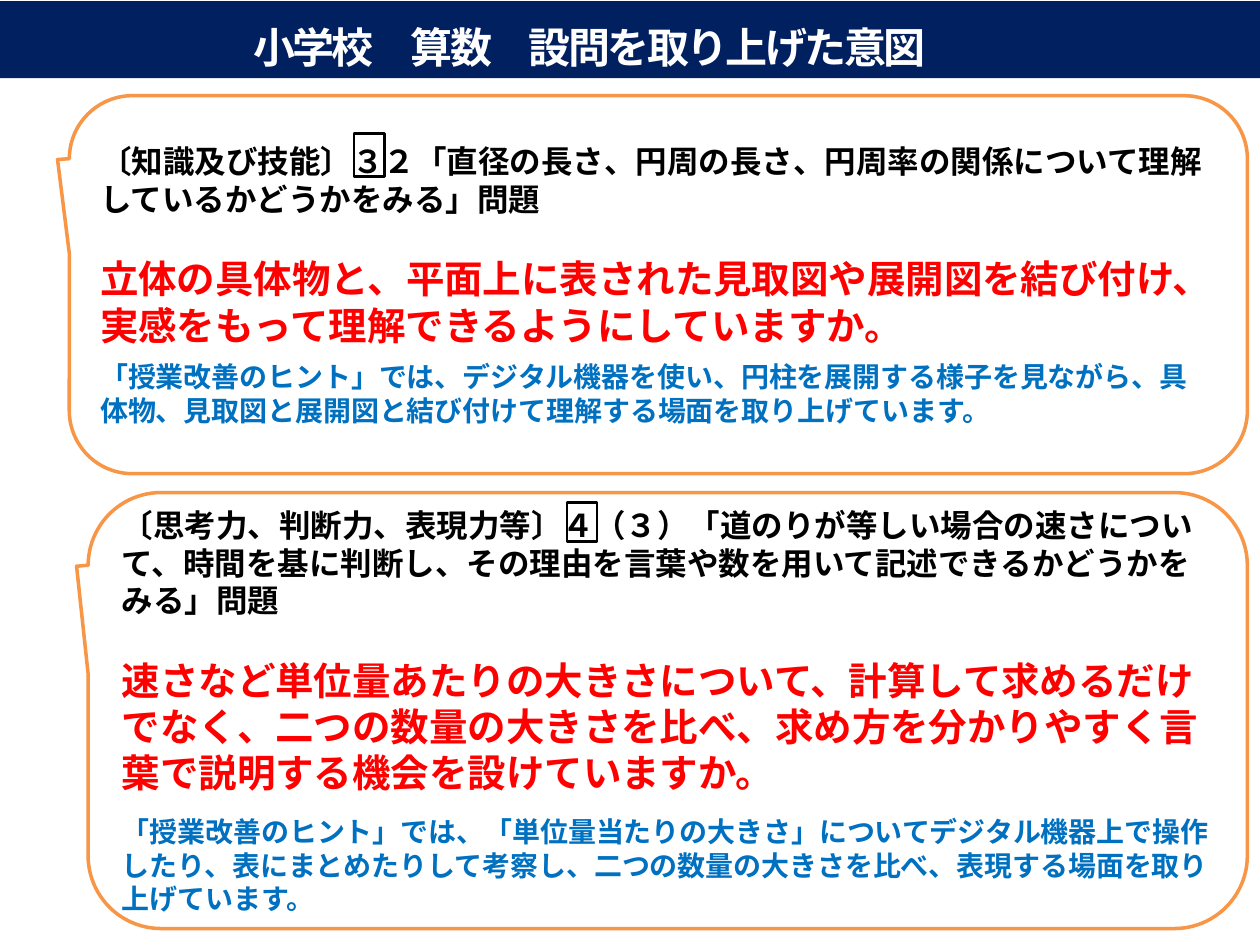
from lxml.etree import SubElement
from pptx import Presentation
from pptx.dml.color import RGBColor
from pptx.enum.lang import MSO_LANGUAGE_ID
from pptx.enum.shapes import MSO_SHAPE
from pptx.enum.text import MSO_ANCHOR, PP_ALIGN
from pptx.oxml.ns import qn
from pptx.util import Inches, Pt

NAVY, ORANGE, WHITE = "002060", "F79646", "FFFFFF"
BLACK, RED, BLUE = "000000", "FF0000", "0070C0"


def color(code):
    return RGBColor.from_string(code)


class Deck:
    font = "Noto Sans CJK JP"

    def __init__(self, slide):
        self.slide = slide

    def style(self, para, size, code, track=None):
        """Format a paragraph; track is letter spacing in points."""
        font = para.font
        font.name, font.size, font.bold = self.font, Pt(size), True
        font.color.rgb = color(code)
        font.language_id = MSO_LANGUAGE_ID.JAPANESE
        props = para._p.pPr.find(qn("a:defRPr"))
        SubElement(props, qn("a:ea")).set("typeface", self.font)
        if track is not None:
            props.set("spc", str(int(track * 100)))

    def title(self, text, box):
        shape = self.slide.shapes.title
        shape.left, shape.top, shape.width, shape.height = map(Inches, box)
        shape.fill.solid()
        shape.fill.fore_color.rgb = color(NAVY)
        frame = shape.text_frame
        frame.text = text
        frame.word_wrap = True
        frame.vertical_anchor = MSO_ANCHOR.MIDDLE
        frame.margin_left, frame.margin_right = Inches(0.1), Inches(0.73)
        frame.margin_top, frame.margin_bottom = Inches(0.16), Inches(0.05)
        para = frame.paragraphs[0]
        para.alignment = PP_ALIGN.CENTER
        self.style(para, 24, WHITE, -1.5)

    def shape(self, kind, box, line, width, fill=None):
        shape = self.slide.shapes.add_shape(kind, *map(Inches, box))
        shape.shadow.inherit = False
        if fill:
            shape.fill.solid()
            shape.fill.fore_color.rgb = color(fill)
        else:
            shape.fill.background()
        shape.line.color.rgb = color(line)
        shape.line.width = Pt(width)
        return shape

    def callout(self, box, texts, gap):
        """Draw a callout with topic, question and hint; gap precedes the hint."""
        shape = self.shape(MSO_SHAPE.ROUNDED_RECTANGULAR_CALLOUT, box, ORANGE, 2, WHITE)
        for i, value in enumerate((-0.51, -0.331, 0.167)):
            shape.adjustments[i] = value
        frame = shape.text_frame
        frame.word_wrap = True
        frame.vertical_anchor = MSO_ANCHOR.MIDDLE
        looks = ((18, BLACK, 0), (22, RED, 21.5), (16, BLUE, gap))
        for i, (text, (size, code, space)) in enumerate(zip(texts, looks)):
            para = frame.add_paragraph() if i else frame.paragraphs[0]
            para.text = text
            para.alignment = PP_ALIGN.LEFT
            para.space_before = Pt(space)
            self.style(para, size, code)

    def frame(self, box):
        """Outline a question number."""
        self.shape(MSO_SHAPE.RECTANGLE, box, BLACK, 1.5)


def main():
    show = Presentation()
    show.slide_width, show.slide_height = Inches(10), Inches(7.5)
    deck = Deck(show.slides.add_slide(show.slide_layouts[5]))
    deck.title("小学校　算数　設問を取り上げた意図", (-0.02, 0.01, 10.02, 0.61))
    deck.callout((0.55, 0.76, 9.35, 3), (
        "〔知識及び技能〕３２「直径の長さ、円周の長さ、円周率の関係について理解しているかどうかをみる」問題",
        "立体の具体物と、平面上に表された見取図や展開図を結び付け、実感をもって理解できるようにしていますか。",
        "「授業改善のヒント」では、デジタル機器を使い、円柱を展開する様子を見ながら、"
        "具体物、見取図と展開図と結び付けて理解する場面を取り上げています。",
    ), 7)
    deck.callout((0.7, 3.91, 9.2, 3.46), (
        "〔思考力、判断力、表現力等〕４（３）「道のりが等しい場合の速さについて、"
        "時間を基に判断し、その理由を言葉や数を用いて記述できるかどうかをみる」問題",
        "速さなど単位量あたりの大きさについて、計算して求めるだけでなく、"
        "二つの数量の大きさを比べ、求め方を分かりやすく言葉で説明する機会を設けていますか。",
        "「授業改善のヒント」では、「単位量当たりの大きさ」についてデジタル機器上で操作したり、"
        "表にまとめたりして考察し、二つの数量の大きさを比べ、表現する場面を取り上げています。",
    ), 11)
    deck.frame((2.81, 1.06, 0.24, 0.34))
    deck.frame((4.5, 3.99, 0.24, 0.31))
    show.save("out.pptx")


if __name__ == "__main__":
    main()
